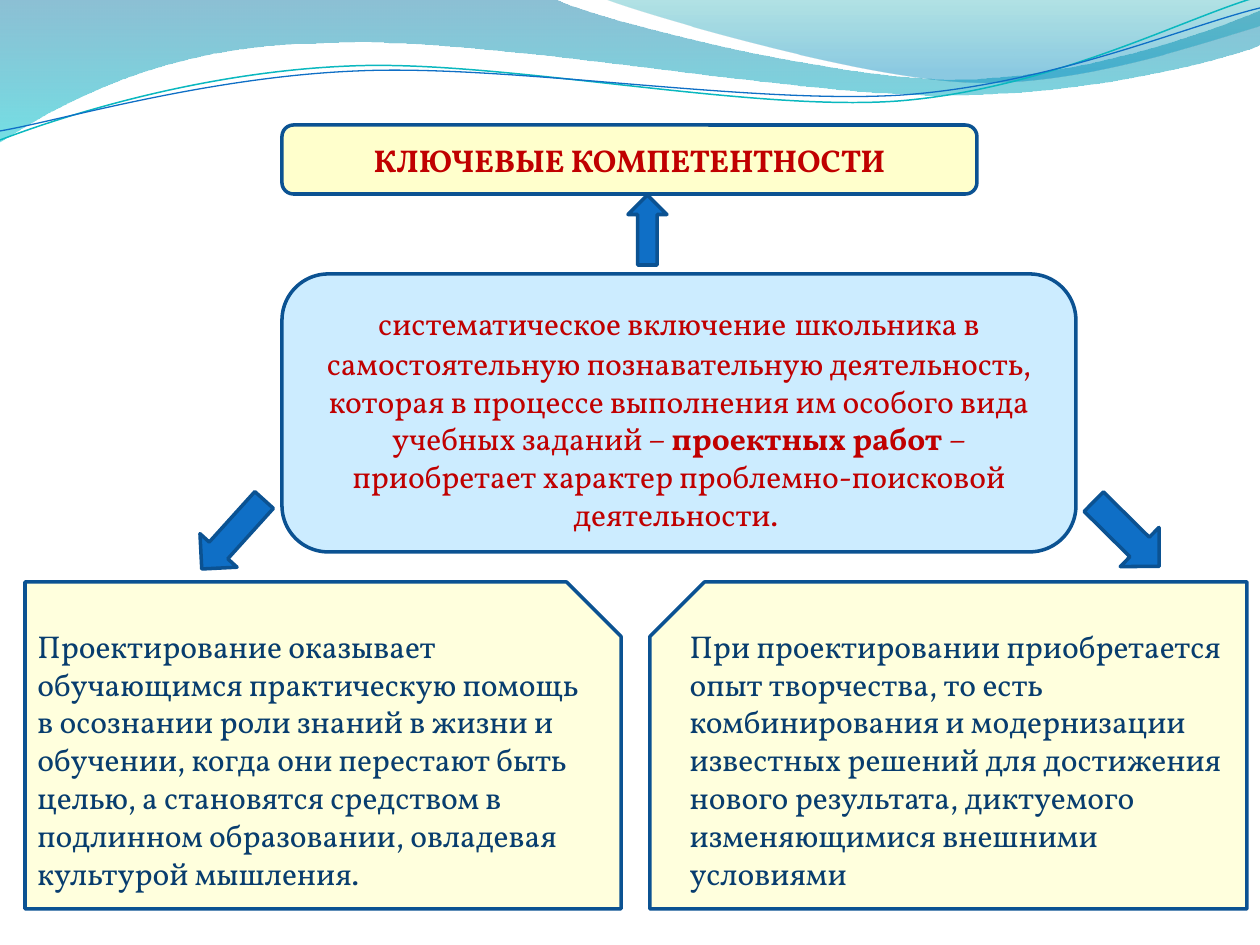
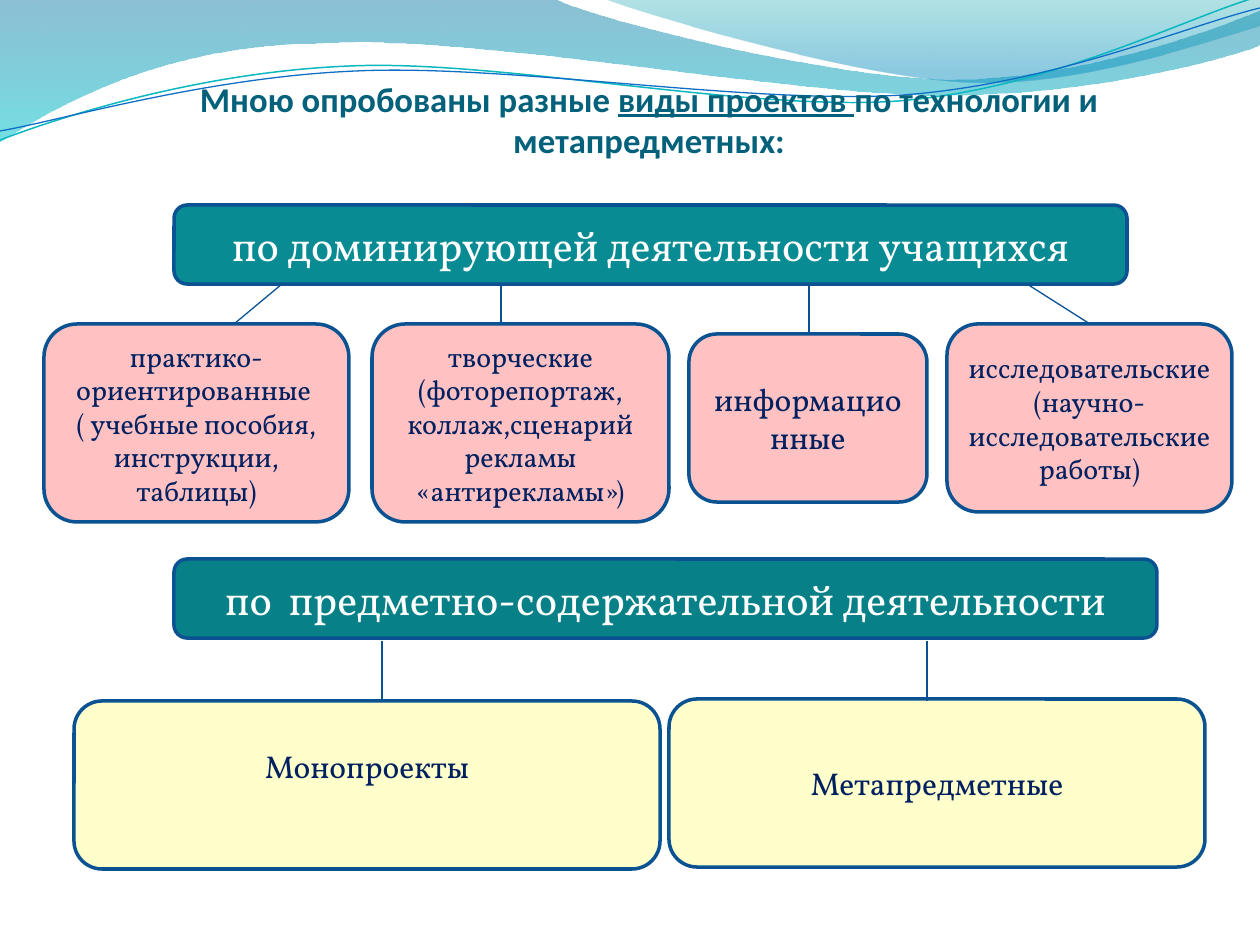
from lxml.etree import SubElement
from pptx import Presentation
from pptx.dml.color import RGBColor
from pptx.enum.shapes import MSO_CONNECTOR, MSO_SHAPE
from pptx.enum.text import MSO_ANCHOR, MSO_AUTO_SIZE, PP_ALIGN
from pptx.oxml.ns import qn
from pptx.util import Pt

PX = 914400 / 126

BLUE = RGBColor(0x0F, 0x6F, 0xC6)
TURQUOISE = RGBColor(0x0A, 0xB8, 0xBF)
OUTLINE = RGBColor(0x0B, 0x52, 0x92)
BRANCH = RGBColor(0x09, 0x52, 0x95)
CREAM = RGBColor(0xFF, 0xFF, 0xCC)
IVORY = RGBColor(0xFF, 0xFF, 0xDD)
SKY = RGBColor(0xCC, 0xEC, 0xFF)
PINK = RGBColor(0xFF, 0xC1, 0xC1)
TEAL = RGBColor(0x08, 0x8B, 0x92)
DEEP_TEAL = RGBColor(0x07, 0x81, 0x87)
RED = RGBColor(0xC0, 0x00, 0x00)
NAVY = RGBColor(0x00, 0x20, 0x60)
INK = RGBColor(0x08, 0x3D, 0x6E)
HEADING = RGBColor(0x04, 0x61, 0x7B)
WHITE = RGBColor(0xFF, 0xFF, 0xFF)
WAVE_BLUE = RGBColor(0x00, 0x74, 0xA1)
WAVE_CYAN = RGBColor(0x00, 0xC6, 0xCF)
CREST_TEAL = RGBColor(0x00, 0xA1, 0xA9)
CREST_BLUE = RGBColor(0x00, 0x8B, 0xBF)


def write(shape, *paragraphs, font="Vollkorn", size=18, color=NAVY, bold=False,
          align=PP_ALIGN.CENTER, bottom=6):
    frame = shape.text_frame
    frame.word_wrap = True
    frame.margin_bottom = round(bottom * PX)
    for index, runs in enumerate(paragraphs):
        paragraph = frame.add_paragraph() if index else frame.paragraphs[0]
        paragraph.alignment = align
        for text, changes in [(runs, {})] if isinstance(runs, str) else runs:
            run = paragraph.add_run()
            run.text = text
            run.font.name = font
            run.font.color.rgb = color
            look = {"size": Pt(size), "bold": bold} | changes
            for attribute, value in look.items():
                setattr(run.font, attribute, value)


def add_box(slide, kind, place, fill):
    box = slide.shapes.add_shape(kind, *(round(v * PX) for v in place))
    box.shadow.inherit = False
    box.fill.solid()
    box.fill.fore_color.rgb = fill
    box.line.color.rgb = OUTLINE
    box.line.width = Pt(2)
    return box


prs = Presentation()
prs.slide_width = round(1260 * PX)
prs.slide_height = round(945 * PX)
competences = prs.slides.add_slide(prs.slide_layouts[6])
projects = prs.slides.add_slide(prs.slide_layouts[5])

waves = [
    ((0, -1), [
        [(554, -1)],
        [(600, 21), (837, 79), (955, 79)], [(1075, 79), (1207, 33), (1260, 11)],
        [(1261, 45)],
        [(1239, 55), (1096, 96), (940, 95)], [(784, 95), (481, 35), (324, 43)],
        [(163, 44), (58, 105), (-1, 142)], [(0, -1)],
    ], [(0, WAVE_BLUE, 45), (1, WAVE_CYAN, 55)], None),
    ((604, -1), [
        [(641, 14), (859, 78), (969, 82)], [(1079, 87), (1211, 40), (1260, 26)],
        [(1260, 0)], [(604, -1)],
    ], [(0, CREST_TEAL, 30), (0.8, CREST_BLUE, 45)], None),
    ((0, 140), [
        [(60, 117), (199, 72), (349, 66)], [(498, 59), (747, 112), (898, 101)],
        [(1050, 89), (1182, 19), (1257, -3)],
    ], None, (TURQUOISE, 0.85)),
    ((0, 131), [
        [(59, 121), (207, 77), (357, 71)], [(508, 64), (752, 105), (903, 95)],
        [(1053, 84), (1186, 26), (1260, 8)],
    ], None, (BLUE, 0.75)),
]
for start, pieces, gradient, stroke in waves:
    outline = competences.shapes.build_freeform(*start, scale=PX)
    outline.add_line_segments(
        [point for piece in pieces for point in piece], close=gradient is not None)
    wave = outline.convert_to_shape()
    segments = iter(list(wave.element.iter(qn("a:lnTo"))))
    for piece in pieces:
        first, *others = [next(segments) for _ in piece]
        if others:
            curve = first.makeelement(qn("a:cubicBezTo"))
            first.addprevious(curve)
            for segment in [first, *others]:
                curve.append(segment[0])
                segment.getparent().remove(segment)
    wave.shadow.inherit = False
    if gradient:
        wave.fill.gradient()
        wave.fill.gradient_angle = 270
        for stop, (position, color, _) in zip(wave.fill.gradient_stops, gradient):
            stop.position = position
            stop.color.rgb = color
        for tint, (_, _, opacity) in zip(wave.element.iter(qn("a:srgbClr")), gradient):
            SubElement(tint, qn("a:alpha"), val=str(opacity * 1000))
        wave.line.fill.background()
    else:
        wave.fill.background()
        wave.line.color.rgb = stroke[0]
        wave.line.width = Pt(stroke[1])
    prs.slide_master.shapes.element.append(wave.element)

key_heading = add_box(competences, MSO_SHAPE.ROUNDED_RECTANGLE, (282, 125, 695, 69), CREAM)
write(key_heading, "КЛЮЧЕВЫЕ КОМПЕТЕНТНОСТИ", color=RED, bold=True)

activity = add_box(competences, MSO_SHAPE.ROUNDED_RECTANGLE, (282, 274, 794, 278), SKY)
write(activity, [
    ("систематическое включение", {}),
    (" ", {"size": Pt(24)}),
    ("школьника в самостоятельную познавательную деятельность, которая в процессе "
     "выполнения им особого вида учебных заданий – ", {}),
    ("проектных работ ", {"bold": True}),
    ("– приобретает характер проблемно-поисковой деятельности. ", {}),
], color=RED)

help_box = add_box(competences, MSO_SHAPE.SNIP_1_RECTANGLE, (25, 582, 596, 327), IVORY)
write(help_box,
      "Проектирование оказывает обучающимся практическую помощь в осознании роли знаний "
      "в жизни и обучении, когда они перестают быть",
      "целью, а становятся средством в подлинном образовании, овладевая культурой мышления.",
      color=INK, align=PP_ALIGN.LEFT)

creativity = add_box(competences, MSO_SHAPE.SNIP_1_RECTANGLE, (650, 582, 597, 327), IVORY)
creativity.element.spPr.find(qn("a:xfrm")).set("flipH", "1")
write(creativity,
      "При проектировании приобретается опыт творчества, то есть комбинирования и "
      "модернизации известных решений для достижения нового результата, диктуемого "
      "изменяющимися внешними условиями",
      color=INK, align=PP_ALIGN.LEFT)

for kind, place, turn in [
    (MSO_SHAPE.UP_ARROW, (628, 195, 39, 70), 0),
    (MSO_SHAPE.DOWN_ARROW, (208, 488, 50, 93), 42.1),
    (MSO_SHAPE.DOWN_ARROW, (1099, 488, 55, 92), 314.7),
]:
    add_box(competences, kind, place, BLUE).rotation = turn

title = projects.shapes.title
title.left, title.top, title.width, title.height = (
    round(v * PX) for v in (63, 59, 1172, 195))
title.text_frame.auto_size = MSO_AUTO_SIZE.NONE
title.text_frame.vertical_anchor = MSO_ANCHOR.BOTTOM
title.text_frame.margin_left = title.text_frame.margin_right = 0
write(title, [
    ("Мною опробованы разные ", {}),
    ("виды проектов ", {"underline": True}),
    ("по технологии и метапредметных:", {}),
], font="Calibri", size=19.8, color=HEADING, bold=True, bottom=93)

for text, place, fill in [
    ("по доминирующей деятельности учащихся", (174, 205, 953, 79), TEAL),
    ("по  предметно-содержательной деятельности", (174, 559, 983, 79), DEEP_TEAL),
]:
    band = add_box(projects, MSO_SHAPE.ROUNDED_RECTANGLE, place, fill)
    write(band, text, size=24, color=WHITE)

for paragraphs, place, fill, size, bottom in [
    (["практико-ориентированные ", "( учебные пособия,", "инструкции, таблицы)"],
     (44, 324, 305, 198), PINK, 16, 6),
    (["творческие (фоторепортаж,", "коллаж,сценарий рекламы «антирекламы»)"],
     (372, 324, 297, 198), PINK, 16, 6),
    (["информационные"], (689, 334, 238, 168), PINK, 18, 6),
    (["исследовательские (научно-исследовательские работы)"],
     (947, 324, 285, 188), PINK, 16, 6),
    (["Монопроекты"], (74, 701, 586, 168), CREAM, 18, 44),
    (["Метапредметные"], (669, 699, 536, 168), CREAM, 18, 6),
]:
    project_type = add_box(projects, MSO_SHAPE.ROUNDED_RECTANGLE, place, fill)
    write(project_type, *paragraphs, size=size, bottom=bottom)

for ends in [
    (282, 284, 234, 324), (501, 284, 501, 324), (809, 284, 809, 334),
    (1027, 284, 1090, 324), (382, 641, 382, 701), (927, 641, 927, 701),
]:
    branch = projects.shapes.add_connector(
        MSO_CONNECTOR.STRAIGHT, *(round(v * PX) for v in ends))
    branch.line.color.rgb = BRANCH
    branch.line.width = Pt(0.75)
    SubElement(branch.element.spPr, qn("a:effectLst"))

prs.save("out.pptx")
